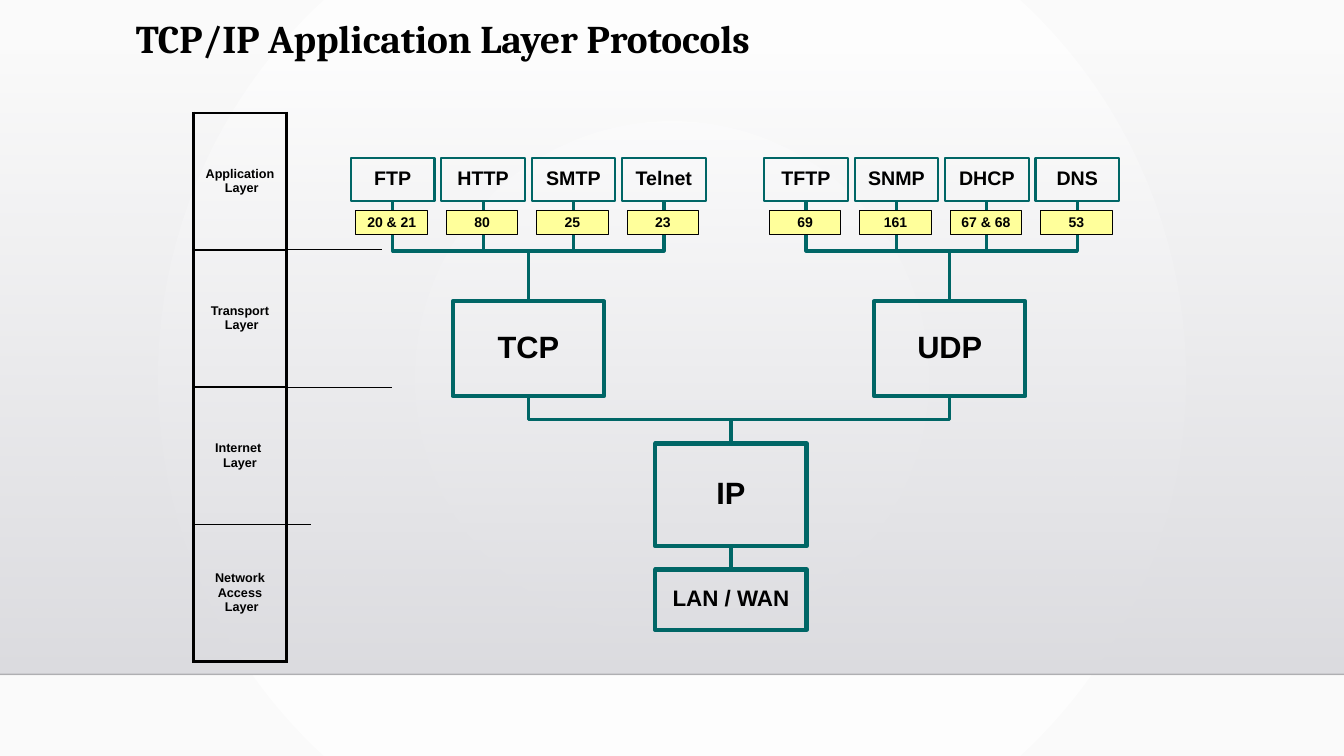
from lxml.etree import SubElement
from pptx import Presentation
from pptx.dml.color import RGBColor
from pptx.enum.shapes import MSO_CONNECTOR, MSO_SHAPE
from pptx.enum.text import MSO_ANCHOR, PP_ALIGN
from pptx.oxml import parse_xml
from pptx.oxml.ns import nsdecls, qn
from pptx.util import Inches, Pt

INK = {"black": "000000", "teal": "006666", "port": "FFFF9B",
       "white": "FFFFFF", "pale": "FAFAFA", "mist": "DCDCE0", "grey": "DEDEE2"}

deck = Presentation()
deck.slide_width, deck.slide_height = Inches(13.33), Inches(7.5)
slide = deck.slides.add_slide(deck.slide_layouts[6])
shapes = slide.shapes


def box(x, y, wide, high, text, size, edge, weight, fill=None, pad=0.09):
    shape = shapes.add_shape(MSO_SHAPE.RECTANGLE, Inches(x), Inches(y), Inches(wide), Inches(high))
    shape.shadow.inherit = False
    shape.line.color.rgb = RGBColor.from_string(INK[edge])
    shape.line.width = Pt(weight)
    if fill:
        shape.fill.solid()
        shape.fill.fore_color.rgb = RGBColor.from_string(INK[fill])
    else:
        shape.fill.background()
    frame = shape.text_frame
    frame.word_wrap = pad > 0
    frame.vertical_anchor = MSO_ANCHOR.MIDDLE
    frame.margin_left = frame.margin_right = Inches(pad)
    frame.margin_top = frame.margin_bottom = Inches(pad / 2)
    para = frame.paragraphs[0]
    para.alignment, para.line_spacing = PP_ALIGN.CENTER, 0.9
    run = para.add_run()
    run.text = text
    run.font.name, run.font.size, run.font.bold = "Arial", Pt(size), True
    run.font.color.rgb = RGBColor.from_string(INK["black"])


def link(x1, y1, x2, y2, edge="teal", weight=2.25, bent=False):
    kind, turn = MSO_CONNECTOR.STRAIGHT, 0
    if bent:
        # A quarter turn about the centre makes the elbow leave downwards
        kind, turn = MSO_CONNECTOR.ELBOW, 270 if x2 > x1 else 90
        midx, midy = (x1 + x2) / 2, (y1 + y2) / 2
        half, rise = (y2 - y1) / 2, abs(x2 - x1) / 2
        side = half if x2 > x1 else -half
        x1, y1, x2, y2 = midx + side, midy - rise, midx - side, midy + rise
    line = shapes.add_connector(kind, Inches(x1), Inches(y1), Inches(x2), Inches(y2))
    line.rotation = turn
    line.line.color.rgb = RGBColor.from_string(INK[edge])
    line.line.width = Pt(weight)
    SubElement(line._element.spPr, qn("a:effectLst"))
    return line


# Backdrop: round gradient, then a panel that darkens downwards
back = slide.background.fill
back.gradient()
for stop, tone in zip(back.gradient_stops, ("white", "pale")):
    stop.color.rgb = RGBColor.from_string(INK[tone])
grad = slide._element.find(".//" + qn("a:gradFill"))
grad.replace(grad.find(qn("a:lin")), parse_xml(
    f'<a:path {nsdecls("a")} path="circle">'
    '<a:fillToRect l="50000" t="50000" r="50000" b="50000"/></a:path>'))

panel = shapes.add_shape(MSO_SHAPE.RECTANGLE, 0, Inches(0.51), deck.slide_width, Inches(6.18))
panel.shadow.inherit = False
panel.line.fill.background()
panel.fill.gradient()
panel.fill.gradient_angle = 270
for stop, tone in zip(panel.fill.gradient_stops, ("mist", "grey")):
    stop.color.rgb = RGBColor.from_string(INK[tone])
tint = panel._element.find(".//" + qn("a:srgbClr"))
SubElement(tint, qn("a:alpha"), val="0")

floor = link(0, 6.69, 13.33, 6.69, "black", 1)
SubElement(floor._element.find(".//" + qn("a:srgbClr")), qn("a:alpha"), val="20000")

# Title
title = shapes.add_textbox(Inches(1.25), Inches(0.15), Inches(10.5), Inches(1.15)).text_frame
title.word_wrap = True
title.paragraphs[0].line_spacing = 0.9
run = title.paragraphs[0].add_run()
run.text = "TCP/IP Application Layer Protocols"
run.font.name, run.font.size, run.font.bold = "Cambria", Pt(28), True
run.font.color.rgb = RGBColor.from_string(INK["black"])

# Layer stack
left, top, wide, row = 1.92, 1.12, 0.92, 1.36
layers = [("Application", " Layer"), ("Transport", " Layer"),
          ("Internet ", "Layer"), ("Network", "Access", " Layer")]
table = shapes.add_table(len(layers), 1, Inches(left), Inches(top),
                         Inches(wide), Inches(row * len(layers))).table
table.first_row = table.horz_banding = False
for i, words in enumerate(layers):
    cell = table.cell(i, 0)
    cell.vertical_anchor = MSO_ANCHOR.MIDDLE
    cell.margin_left = cell.margin_right = 0
    cell.margin_top = cell.margin_bottom = Inches(0.04)
    for j, word in enumerate(words):
        para = cell.text_frame.add_paragraph() if j else cell.text_frame.paragraphs[0]
        para.alignment = PP_ALIGN.CENTER
        run = para.add_run()
        run.text = word
        run.font.name, run.font.size, run.font.bold = "Arial", Pt(9), True
        run.font.color.rgb = RGBColor.from_string(INK["black"])
    # Heavy outer frame, thin rules between the layers
    rules = {"L": 2.25, "R": 2.25, "T": 1 if i else 2.25,
             "B": 1 if i < len(layers) - 1 else 2.25}
    for side, weight in rules.items():
        edge = SubElement(cell._tc.get_or_add_tcPr(), qn(f"a:ln{side}"), w=str(Pt(weight)))
        solid = SubElement(edge, qn("a:solidFill"))
        SubElement(solid, qn("a:srgbClr"), val=INK["black"])
    cell.fill.background()

# Network and internet boxes
mid, big = 7.25, 1.5
box(mid - big / 2, 5.65, big, 0.6, "LAN / WAN", 16, "teal", 3)
box(mid - big / 2, 4.4, big, 1.02, "IP", 22, "teal", 3)
link(mid, 5.42, mid, 5.65)

# Transport boxes, each with its protocols and ports
trees = [
    ("TCP", 5.24, 3.48, [("FTP", "20 & 21"), ("HTTP", "80"), ("SMTP", "25"), ("Telnet", "23")]),
    ("UDP", 9.42, 7.58, [("TFTP", "69"), ("SNMP", "161"), ("DHCP", "67 & 68"), ("DNS", "53")]),
]
step, slot = 2.69 / 3, 0.83
for name, hub, start, leaves in trees:
    box(hub - big / 2, 2.99, big, 0.94, name, 22, "teal", 3)
    link(hub, 3.93, mid, 4.4, bent=True)
    for i, (leaf, port) in enumerate(leaves):
        x = start + i * step
        box(x, 1.57, slot, 0.42, leaf, 14, "teal", 1.5)
        link(x + slot / 2, 1.99, hub, 2.99, bent=True)
        box(x + 0.05, 2.09, 0.71, 0.24, port, 10, "black", 0.75, "port", 0)

# Rules running out from the stack
for i, end in enumerate((3.79, 3.89, 3.08), 1):
    y = top + i * row
    link(left, y, end, y, "black", 0.75)

deck.save("out.pptx")
